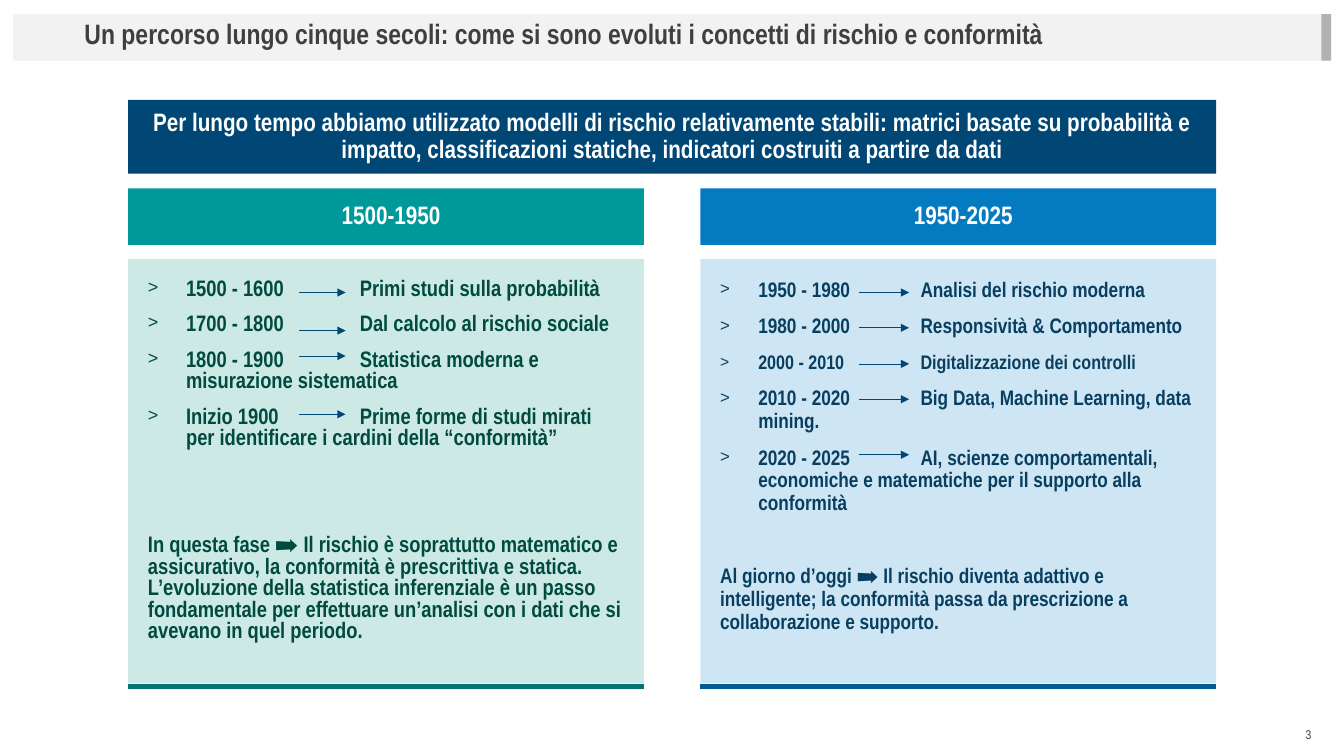
"""Build the slide on five centuries of risk and compliance concepts."""
from lxml import etree
from pptx import Presentation
from pptx.dml.color import RGBColor
from pptx.enum.shapes import MSO_CONNECTOR, MSO_SHAPE
from pptx.enum.text import MSO_ANCHOR, PP_ALIGN
from pptx.oxml.ns import qn
from pptx.util import Cm, Pt

RECTANGLE = MSO_SHAPE.RECTANGLE
STRAIGHT = MSO_CONNECTOR.STRAIGHT
TOP, MIDDLE = MSO_ANCHOR.TOP, MSO_ANCHOR.MIDDLE
LEFT, CENTER, RIGHT = PP_ALIGN.LEFT, PP_ALIGN.CENTER, PP_ALIGN.RIGHT

WHITE = RGBColor(0xFF, 0xFF, 0xFF)
LIGHT_GRAY = RGBColor(0xF2, 0xF2, 0xF2)
GRAY = RGBColor(0xB2, 0xB2, 0xB2)
DARK_GRAY = RGBColor(0x3F, 0x3F, 0x3F)
NAVY = RGBColor(0x00, 0x47, 0x75)
TEAL = RGBColor(0x00, 0x99, 0x99)
TEAL_LINE = RGBColor(0x00, 0x73, 0x73)
TEAL_PALE = RGBColor(0xCC, 0xE9, 0xE5)
TEAL_TEXT = RGBColor(0x00, 0x4A, 0x40)
BLUE = RGBColor(0x04, 0x7B, 0xC1)
BLUE_LINE = RGBColor(0x03, 0x5C, 0x91)
BLUE_PALE = RGBColor(0xCE, 0xE5, 0xF3)
BLUE_TEXT = RGBColor(0x08, 0x3F, 0x61)

COLUMN_WIDTH = 13
INDENT = Cm(0.96)

COLUMNS = [
    dict(left=3.23, heading="1500-1950", fill=TEAL, pale=TEAL_PALE, line=TEAL_LINE,
         color=TEAL_TEXT, size=16, spacing=0.8, tab=5.34, arrow=(7.54, 8.71), gap=61,
         periods=[("1500 - 1600", "Primi studi sulla probabilità", 7.37, 16),
                  ("1700 - 1800", "Dal calcolo al rischio sociale", 8.33, 16),
                  ("1800 - 1900", "Statistica moderna e misurazione sistematica", 8.97, 16),
                  ("Inizio 1900", "Prime forme di studi mirati per identificare i cardini "
                   "della “conformità”", 10.44, 16)],
         summary="In questa fase ➡ Il rischio è soprattutto matematico e assicurativo, la "
                 "conformità è prescrittiva e statica. L’evoluzione della statistica "
                 "inferenziale è un passo fondamentale per effettuare un’analisi con i dati "
                 "che si avevano in quel periodo."),
    dict(left=17.65, heading="1950-2025", fill=BLUE, pale=BLUE_PALE, line=BLUE_LINE,
         color=BLUE_TEXT, size=15, spacing=0.9, tab=5.05, arrow=(21.64, 22.91), gap=36,
         periods=[("1950 - 1980", "Analisi del rischio moderna", 7.37, 15),
                  ("1980 - 2000", "Responsività & Comportamento", 8.26, 15),
                  ("2000 - 2010", "Digitalizzazione dei controlli", 9.17, 14),
                  ("2010 - 2020", "Big Data, Machine Learning, data mining.", 10.06, 15),
                  ("2020 - 2025", "AI, scienze comportamentali, economiche e matematiche "
                   "per il supporto alla conformità", 11.46, 15)],
         summary="Al giorno d’oggi ➡ Il rischio diventa adattivo e intelligente; la "
                 "conformità passa da prescrizione a collaborazione e supporto."),
]

presentation = Presentation()
presentation.slide_width = Cm(33.87)
presentation.slide_height = Cm(19.05)
slide = presentation.slides.add_slide(presentation.slide_layouts[6])


def add_box(left, top, width, height, fill=None, text="", size=18, color=WHITE,
            bold=True, align=CENTER, anchor=MIDDLE):
    if fill is None:
        shape = slide.shapes.add_textbox(Cm(left), Cm(top), Cm(width), Cm(height))
    else:
        shape = slide.shapes.add_shape(RECTANGLE, Cm(left), Cm(top), Cm(width), Cm(height))
        shape.shadow.inherit = False
        shape.fill.solid()
        shape.fill.fore_color.rgb = fill
        shape.line.fill.background()
    frame = shape.text_frame
    frame.word_wrap = True
    frame.vertical_anchor = anchor
    if text:
        paragraph = frame.paragraphs[0]
        paragraph.text = text
        paragraph.alignment = align
        paragraph.line_spacing = 0.9
        paragraph.font.name = "Arial Narrow"
        paragraph.font.size = Pt(size)
        paragraph.font.bold = bold
        paragraph.font.color.rgb = color
    return shape


def add_line(start, end, y, color, width):
    connector = slide.shapes.add_connector(STRAIGHT, Cm(start), Cm(y), Cm(end), Cm(y))
    connector.line.color.rgb = color
    connector.line.width = Pt(width)
    etree.SubElement(connector._element.spPr, qn("a:effectLst"))
    return connector


add_box(0.33, 0.36, 33.22, 1.17, LIGHT_GRAY)
add_box(33.3, 0.36, 0.25, 1.17, GRAY)
add_box(1.88, 0.38, 31.42, 1.17, size=20, color=DARK_GRAY, align=LEFT, anchor=TOP,
        text="Un percorso lungo cinque secoli: come si sono evoluti i concetti di rischio "
             "e conformità")
add_box(3.23, 2.52, 27.42, 1.86, NAVY,
        "Per lungo tempo abbiamo utilizzato modelli di rischio relativamente stabili: matrici "
        "basate su probabilità e impatto, classificazioni statiche, indicatori costruiti a "
        "partire da dati")

for column in COLUMNS:
    left = column["left"]
    heading = add_box(left, 4.75, COLUMN_WIDTH, 1.42, column["fill"], column["heading"])
    heading.text_frame.margin_left = Cm(0.5)
    add_line(left, left + COLUMN_WIDTH, 17.3, column["line"], 3)

    panel = add_box(left, 6.53, COLUMN_WIDTH, 10.69, column["pale"], anchor=TOP)
    frame = panel.text_frame
    frame.margin_left = frame.margin_right = Cm(0.5)
    frame.margin_top = frame.margin_bottom = Cm(0.5)
    for index, (period, topic, arrow_y, size) in enumerate(column["periods"]):
        paragraph = frame.paragraphs[0] if index == 0 else frame.add_paragraph()
        paragraph.text = f"{period}\t{topic}"
        paragraph.space_before = Pt(10 if index else 0)
        paragraph.font.size = Pt(size)
        properties = paragraph._p.get_or_add_pPr()
        properties.set("marL", str(INDENT))
        properties.set("indent", str(-INDENT))
        bullet = etree.fromstring(
            '<a:pPr xmlns:a="http://schemas.openxmlformats.org/drawingml/2006/main">'
            f'<a:buClr><a:srgbClr val="{column["color"]}"/></a:buClr>'
            '<a:buSzPct val="80000"/><a:buFont typeface="Arial"/><a:buChar char="&gt;"/>'
            f'<a:tabLst><a:tab pos="{Cm(column["tab"])}" algn="l"/></a:tabLst></a:pPr>')
        for element in list(bullet):
            properties.find(qn("a:defRPr")).addprevious(element)
        arrow = add_line(*column["arrow"], arrow_y, NAVY, 0.5)
        etree.SubElement(arrow.line._get_or_add_ln(), qn("a:tailEnd"), type="triangle")

    summary = frame.add_paragraph()
    summary.text = column["summary"]
    summary.space_before = Pt(column["gap"])
    summary.font.size = Pt(column["size"])
    for paragraph in frame.paragraphs:
        paragraph.alignment = LEFT
        paragraph.line_spacing = column["spacing"]
        paragraph.font.name = "Arial Narrow"
        paragraph.font.bold = True
        paragraph.font.color.rgb = column["color"]

add_box(25.68, 18.03, 7.62, 1.02, text="3", size=9, color=DARK_GRAY, bold=False, align=RIGHT)

presentation.save("out.pptx")
